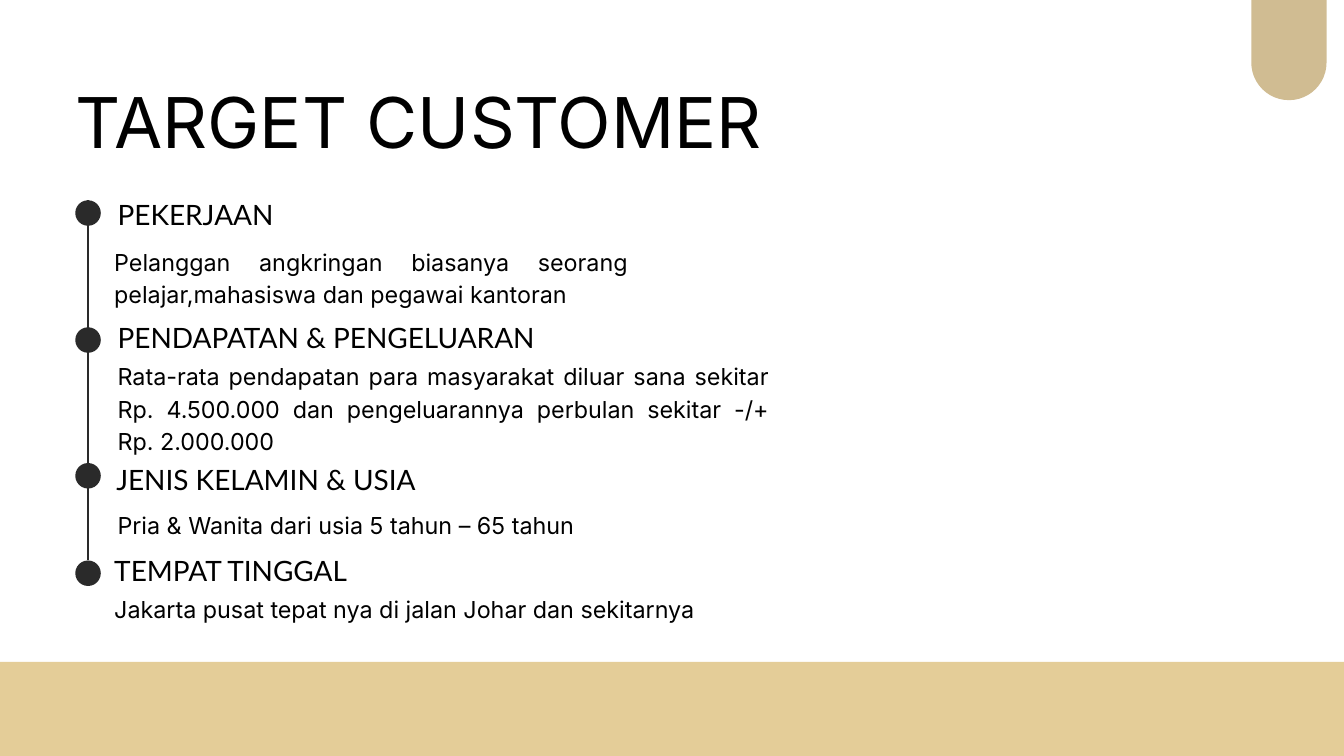
"""Build the target customer slide with its four-step timeline."""
from lxml import etree
from pptx import Presentation
from pptx import util as u
from pptx.dml.color import RGBColor
from pptx.enum import shapes, text
from pptx.oxml.ns import qn

COLUMNS, ROWS = 20, 11.25
CELL = u.Inches(1)
INK, DARK, SAND, TAN = "000000", "2A2A2A", "E4CD98", "D0BC92"
RAIL, DOT = 1.31, 0.38
LEADING = 1.4
SECTIONS = [
    {"dot": 2.98, "head": (1.75, 2.86, 4.16, "PEKERJAAN"),
     "body": (1.7, 3.62, 7.64, 2, "Pelanggan angkringan biasanya seorang "
              "pelajar,mahasiswa dan pegawai kantoran")},
    {"dot": 4.87, "head": (1.75, 4.69, 9.69, "PENDAPATAN & PENGELUARAN"),
     "body": (1.75, 5.32, 9.69, 3, "Rata-rata pendapatan para masyarakat diluar sana sekitar "
              "Rp. 4.500.000 dan pengeluarannya perbulan sekitar -/+ Rp. 2.000.000")},
    {"dot": 6.89, "head": (1.73, 6.8, 9.69, "JENIS KELAMIN & USIA"),
     "body": (1.75, 7.53, 9.35, 1, "Pria & Wanita dari usia 5 tahun – 65 tahun")},
    {"dot": 8.34, "head": (1.7, 8.15, 9.69, "TEMPAT TINGGAL"),
     "body": (1.7, 8.78, 9.35, 1, "Jakarta pusat tepat nya di jalan Johar dan sekitarnya")},
]


def grid(*cells):
    """Turn columns and rows of the grid into slide lengths."""
    return [round(cell * CELL) for cell in cells]


def color(value):
    """Turn a hex string into a colour."""
    return RGBColor.from_string(value)


def add_block(slide, kind, place, fill):
    """Add a flat preset shape without an outline."""
    block = slide.shapes.add_shape(kind, *grid(*place))
    block.shadow.inherit = False
    block.fill.solid()
    block.fill.fore_color.rgb = color(fill)
    block.line.fill.background()
    return block


def add_rail(slide, top, bottom):
    """Add the vertical line that joins the timeline dots."""
    rail = slide.shapes.add_connector(
        shapes.MSO_CONNECTOR.STRAIGHT, *grid(RAIL, top, RAIL, bottom))
    rail.line.color.rgb = color(DARK)
    rail.line.width = u.Pt(3)
    etree.SubElement(rail._element.spPr, qn("a:effectLst"))


def add_text(slide, words, left, top, width, size, lines=1, font="Inter", justify=False):
    """Add a wrapped one-paragraph text box with proportional leading."""
    height = lines * size * LEADING / 72
    box = slide.shapes.add_textbox(*grid(left, top, width, height))
    frame = box.text_frame
    frame.word_wrap = True
    frame.margin_left = frame.margin_right = frame.margin_top = frame.margin_bottom = 0
    para = frame.paragraphs[0]
    para.alignment = text.PP_ALIGN.JUSTIFY if justify else text.PP_ALIGN.LEFT
    para.line_spacing = u.Pt(size * LEADING)
    span = para.add_run()
    span.text = words
    span.font.name = font
    span.font.size = u.Pt(size)
    span.font.color.rgb = color(INK)


def add_section(slide, section):
    """Add the heading and body of one timeline section."""
    left, top, width, words = section["head"]
    add_text(slide, words, left, top, width, size=30, font="Lato")
    left, top, width, lines, words = section["body"]
    add_text(slide, words, left, top, width, size=25, lines=lines, justify=True)


def main():
    """Build and save the deck."""
    deck = Presentation()
    deck.slide_width, deck.slide_height = grid(COLUMNS, ROWS)
    slide = deck.slides.add_slide(deck.slide_layouts[6])
    kinds = shapes.MSO_SHAPE
    add_block(slide, kinds.RECTANGLE, (0, 9.85, COLUMNS, ROWS - 9.85), SAND)
    add_rail(slide, SECTIONS[0]["dot"], SECTIONS[-1]["dot"])
    for section in SECTIONS:
        add_block(slide, kinds.OVAL, (RAIL - DOT / 2, section["dot"], DOT, DOT), DARK)
    add_text(slide, "TARGET CUSTOMER", 1.12, 0.96, 12.16, size=75)
    for section in SECTIONS:
        add_section(slide, section)
    tab = add_block(slide, kinds.ROUND_2_SAME_RECTANGLE, (18.62, 0, 1.12, 1.49), TAN)
    tab.adjustments[0] = 0.5
    tab.rotation = 180
    deck.save("out.pptx")


if __name__ == "__main__":
    main()
